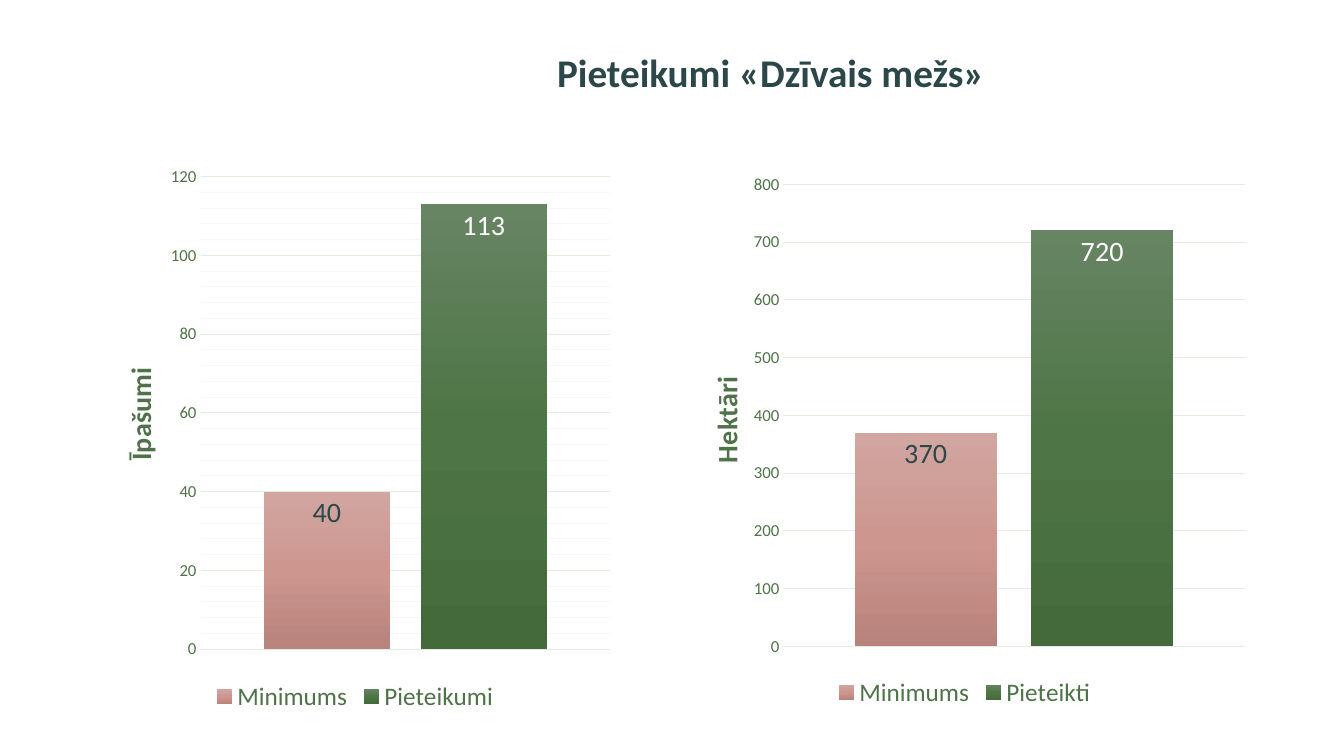
from copy import deepcopy

from lxml import etree
from pptx import Presentation
from pptx.chart.data import CategoryChartData as ChartData
from pptx.dml.color import RGBColor
from pptx.enum.chart import XL_CHART_TYPE as ChartType
from pptx.enum.chart import XL_LABEL_POSITION as LabelPosition
from pptx.enum.chart import XL_LEGEND_POSITION as LegendPosition
from pptx.enum.chart import XL_TICK_MARK as TickMark
from pptx.enum.text import MSO_AUTO_SIZE as AutoSize
from pptx.enum.text import PP_ALIGN as Align
from pptx.oxml import parse_xml
from pptx.oxml.ns import nsdecls, qn
from pptx.util import Inches, Pt

DARK, GREEN, WHITE = "2C4749", "4F7348", "FFFFFF"
GRID, MINOR_GRID = "E3ECE1", "F5F8F4"
ROSE_STOPS = ("D1A5A0", "CD9790", "B9837D")
GREEN_STOPS = ("678463", "4E7546", "446A3C")


def rgb(value):
    return RGBColor.from_string(value)


def set_font(font, size, color, bold=False):
    values = {"name": "Calibri", "size": Pt(size), "bold": bold}
    for name, value in values.items():
        setattr(font, name, value)
    font.color.rgb = rgb(color)


def set_gradient(series, colors):
    """Fill a series from top to bottom with evenly spaced colours."""
    step = 100000 // (len(colors) - 1)
    stops = "".join(
        f'<a:gs pos="{index * step}"><a:srgbClr val="{color}"/></a:gs>'
        for index, color in enumerate(colors))
    fill = parse_xml(
        f'<a:gradFill {nsdecls("a")} rotWithShape="1"><a:gsLst>{stops}</a:gsLst>'
        '<a:lin ang="5400000" scaled="0"/></a:gradFill>')
    series.format.line.fill.background()
    series.format.fill.background()
    properties = series.format.fill._xPr
    properties.replace(properties.find(qn("a:noFill")), fill)


def set_layout(parent, index, **fractions):
    """Place a chart part by fractions of the chart area."""
    old = parent.find(qn("c:layout"))
    if old is not None:
        parent.remove(old)
    layout = parse_xml(f'<c:layout {nsdecls("c")}><c:manualLayout/></c:layout>')
    parent.insert(index, layout)
    values = {"xMode": "edge", "yMode": "edge", **fractions}
    if "w" in fractions:
        values = {"layoutTarget": "inner", **values}
    for name, value in values.items():
        etree.SubElement(layout[0], qn(f"c:{name}")).set("val", str(value))


def add_minor_grid(axis):
    """Give the minor gridlines the major style in a paler colour."""
    axis.has_minor_gridlines = True
    major, minor = (axis._element.find(qn(f"c:{kind}Gridlines"))
                    for kind in ("major", "minor"))
    minor.append(deepcopy(major.find(qn("c:spPr"))))
    for color in minor.iter(qn("a:srgbClr")):
        color.set("val", MINOR_GRID)


class SlideBuilder:
    def __init__(self, deck):
        self.page = deck.slides.add_slide(deck.slide_layouts[6])

    def title(self, text, bounds):
        box = self.page.shapes.add_textbox(*map(Inches, bounds))
        frame = box.text_frame
        frame.word_wrap = True
        frame.auto_size = AutoSize.SHAPE_TO_FIT_TEXT
        para = frame.paragraphs[0]
        para.alignment = Align.CENTER
        span = para.add_run()
        span.text = text
        set_font(span.font, 28, DARK, bold=True)

    def column_chart(self, bounds, axis_title, values, plot, title_place, minor=False):
        data = ChartData()
        data.categories = ["1"]
        for name, value in values.items():
            data.add_series(name, [value])
        chart = self.page.shapes.add_chart(
            ChartType.COLUMN_CLUSTERED, *map(Inches, bounds), data).chart
        set_font(chart.font, 10, DARK)
        chart.has_title = False
        chart.category_axis.visible = False

        # Legend
        chart.has_legend = True
        chart.legend.position = LegendPosition.BOTTOM
        chart.legend.include_in_layout = False
        set_font(chart.legend.font, 18, GREEN)

        # Columns and value labels
        columns = chart.plots[0]
        for name, value in {"gap_width": 100, "overlap": -24,
                            "vary_by_categories": False}.items():
            setattr(columns, name, value)
        looks = ((ROSE_STOPS, DARK), (GREEN_STOPS, WHITE))
        for series, (stops, label_color) in zip(columns.series, looks):
            set_gradient(series, stops)
            labels = series.data_labels
            labels.show_value = True
            labels.position = LabelPosition.INSIDE_END
            set_font(labels.font, 20, label_color)

        # Value axis
        axis = chart.value_axis
        axis.major_tick_mark = axis.minor_tick_mark = TickMark.NONE
        axis.format.line.fill.background()
        set_font(axis.tick_labels.font, 12, GREEN)
        grid_line = axis.major_gridlines.format.line
        grid_line.color.rgb = rgb(GRID)
        grid_line.width = Pt(0.75)
        if minor:
            add_minor_grid(axis)

        # Axis title, reading upwards
        frame = axis.axis_title.text_frame
        span = frame.paragraphs[0].add_run()
        span.text = axis_title
        set_font(span.font, 20, GREEN, bold=True)
        body = frame._txBody.find(qn("a:bodyPr"))
        body.set("rot", "-5400000")
        body.set("vert", "horz")

        title_x, title_y = title_place
        set_layout(axis.axis_title._element, 1, x=title_x, y=title_y)
        set_layout(chart._chartSpace.chart.plotArea, 0, **dict(zip("xywh", plot)))


def main():
    deck = Presentation()
    deck.slide_width, deck.slide_height = Inches(13.33), Inches(7.5)
    builder = SlideBuilder(deck)

    builder.title("Pieteikumi «Dzīvais mežs»", (5.25, 0.43, 4.79, 0.57))
    # Hectares
    builder.column_chart(
        (6.67, 1.61, 5.79, 5.46), "Hektāri", {"Minimums": 370, "Pieteikti": 720},
        plot=(0.19, 0.04, 0.79, 0.84), title_place=(0.05, 0.38))
    # Properties
    builder.column_chart(
        (0.88, 1.53, 5.28, 5.58), "Īpašumi", {"Minimums": 40, "Pieteikumi": 113},
        plot=(0.21, 0.04, 0.77, 0.84), title_place=(0.05, 0.37), minor=True)

    deck.save("out.pptx")


if __name__ == "__main__":
    main()
